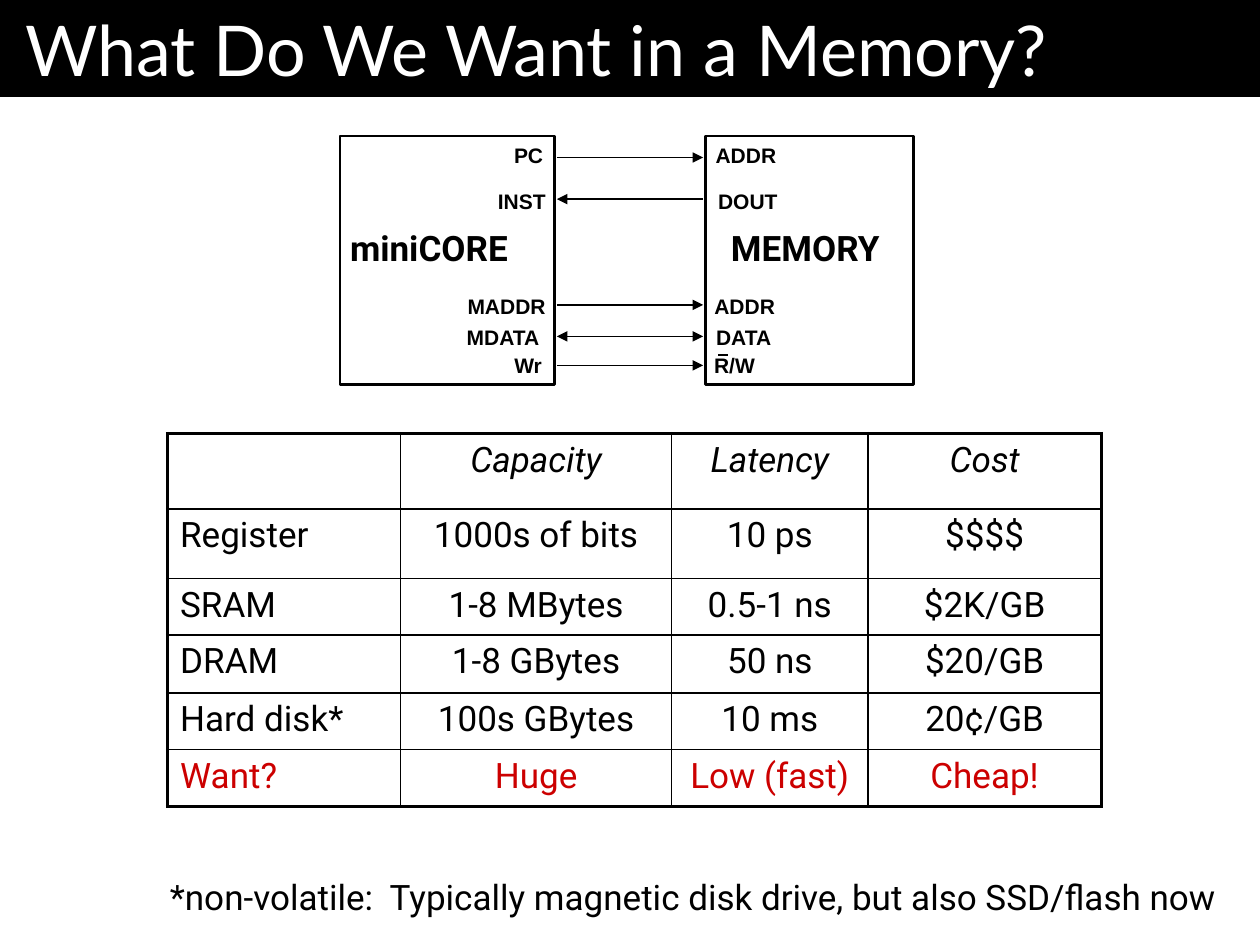
from dataclasses import dataclass

from lxml import etree
from pptx import Presentation
from pptx.dml.color import RGBColor
from pptx.enum.shapes import MSO_CONNECTOR, MSO_SHAPE
from pptx.enum.text import MSO_ANCHOR, MSO_AUTO_SIZE, PP_ALIGN
from pptx.oxml.ns import qn
from pptx.util import Inches, Pt

LEFT, CENTER, RIGHT = PP_ALIGN.LEFT, PP_ALIGN.CENTER, PP_ALIGN.RIGHT
STRAIGHT, RECTANGLE = MSO_CONNECTOR.STRAIGHT, MSO_SHAPE.RECTANGLE
TITLE_ONLY = 5


@dataclass(frozen=True)
class Theme:
    ink: str = "000000"
    paper: str = "FFFFFF"
    accent: str = "CC0000"
    title_font: str = "Lato"
    body_font: str = "Roboto"
    signal_font: str = "Arial"
    title_size: int = 40
    body_size: int = 20
    signal_size: int = 12


THEME = Theme()

# Arrow height, arrow direction, label top, then (label, left, width) on each side
SIGNALS = [
    (0.17, "out", 0, ("PC", 1.28, 0.43), ("ADDR", 2.86, 0.7)),
    (0.5, "in", 0.37, ("INST", 1.15, 0.58), ("DOUT", 2.9, 0.67)),
    (1.34, "out", 1.2, ("MADDR", 0.9, 0.83), ("ADDR", 2.85, 0.7)),
    (1.59, "both", 1.45, ("MDATA", 0.88, 0.8), ("DATA", 2.86, 0.66)),
    (1.82, "out", 1.67, ("Wr", 1.26, 0.44), ("R/W", 2.85, 0.54)),
]

MEMORY_TYPES = [
    ("", "Capacity", "Latency", "Cost"),
    ("Register", "1000s of bits", "10 ps", "$$$$"),
    ("SRAM", "1-8 MBytes", "0.5-1 ns", "$2K/GB"),
    ("DRAM", "1-8 GBytes", "50 ns", "$20/GB"),
    ("Hard disk*", "100s GBytes", "10 ms", "20¢/GB"),
    ("Want?", "Huge", "Low (fast)", "Cheap!"),
]
COLUMN_WIDTHS = (1.85, 2.15, 1.56, 1.85)
ROW_HEIGHTS = (0.6, 0.55, 0.45, 0.46, 0.45, 0.45)


def style_text(frame, font, size, color=THEME.ink, align=LEFT, bold=False, italic=False):
    for paragraph in frame.paragraphs:
        paragraph.alignment = align
        for run in paragraph.runs:
            run.font.name = font
            run.font.size = Pt(size)
            run.font.bold = bold
            run.font.italic = italic
            run.font.color.rgb = RGBColor.from_string(color)


def add_label(slide, text, left, top, width, height, **style):
    frame = slide.shapes.add_textbox(
        Inches(left), Inches(top), Inches(width), Inches(height)).text_frame
    frame.word_wrap = False
    frame.auto_size = MSO_AUTO_SIZE.SHAPE_TO_FIT_TEXT
    frame.text = text
    style_text(frame, **style)


def add_line(slide, start, end, weight, ends=()):
    """Draw a straight line; ends lists the arrowheads, headEnd or tailEnd."""
    connector = slide.shapes.add_connector(
        STRAIGHT, *(Inches(value) for value in (*start, *end)))
    connector.line.color.rgb = RGBColor.from_string(THEME.ink)
    connector.line.width = Pt(weight)
    properties = connector._element.spPr
    outline = properties.find(qn("a:ln"))
    for end_name in ends:
        etree.SubElement(outline, qn(f"a:{end_name}"), type="triangle")
    etree.SubElement(properties, qn("a:effectLst"))


def add_title(slide, left, top, width, height):
    title = slide.shapes.title
    title.left, title.top = Inches(left), Inches(top)
    title.width, title.height = Inches(width), Inches(height)
    title.fill.solid()
    title.fill.fore_color.rgb = RGBColor.from_string(THEME.ink)
    frame = title.text_frame
    frame.margin_left = frame.margin_right = Inches(0.2)
    frame.margin_top = frame.margin_bottom = Inches(0.05)
    frame.vertical_anchor = MSO_ANCHOR.TOP
    frame.auto_size = MSO_AUTO_SIZE.NONE
    frame.text = "What Do We Want in a Memory?"
    style_text(frame, THEME.title_font, THEME.title_size, THEME.paper)


def add_unit(slide, left, top, width, height):
    unit = slide.shapes.add_shape(
        RECTANGLE, Inches(left), Inches(top), Inches(width), Inches(height))
    unit.shadow.inherit = False
    unit.fill.background()
    unit.line.color.rgb = RGBColor.from_string(THEME.ink)
    unit.line.width = Pt(1.5)


def add_signal_diagram(slide, left, top, height):
    """Processor and memory blocks joined by their signals."""
    for unit_left, unit_width in ((0, 1.7), (2.9, 1.65)):
        add_unit(slide, left + unit_left, top, unit_width, height)
    for name, name_left in (("miniCORE", -0.03), ("MEMORY", 2.92)):
        add_label(slide, name, left + name_left, top + 0.67, 1.46, 0.44,
                  font=THEME.body_font, size=THEME.body_size, align=RIGHT, bold=True)

    processor_edge, memory_edge = left + 1.72, left + 2.88
    for arrow_y, direction, label_y, *labels in SIGNALS:
        start, end = (processor_edge, top + arrow_y), (memory_edge, top + arrow_y)
        if direction != "out":
            start, end = end, start
        heads = ("headEnd", "tailEnd") if direction == "both" else ("tailEnd",)
        add_line(slide, start, end, 0.75, heads)
        for text, label_left, label_width in labels:
            add_label(slide, text, left + label_left, top + label_y, label_width, 0.3,
                      font=THEME.signal_font, size=THEME.signal_size, align=RIGHT, bold=True)

    bar_y = top + 1.74
    add_line(slide, (left + 3, bar_y), (left + 3.08, bar_y), 1)


def set_borders(cell, weights):
    """Set border weights in points, in the order left, right, top, bottom."""
    properties = cell._tc.get_or_add_tcPr()
    for side, weight in zip("LRTB", weights):
        border = etree.SubElement(properties, qn(f"a:ln{side}"), w=str(Pt(weight)))
        fill = etree.SubElement(border, qn("a:solidFill"))
        etree.SubElement(fill, qn("a:srgbClr"), val=THEME.ink)


def add_memory_table(slide, left, top, width, height):
    last_row, last_column = len(ROW_HEIGHTS) - 1, len(COLUMN_WIDTHS) - 1
    table = slide.shapes.add_table(
        last_row + 1, last_column + 1,
        Inches(left), Inches(top), Inches(width), Inches(height)).table
    table.first_row = table.horz_banding = False
    for column, column_width in zip(table.columns, COLUMN_WIDTHS):
        column.width = Inches(column_width)
    for row, row_height in zip(table.rows, ROW_HEIGHTS):
        row.height = Inches(row_height)

    for r, values in enumerate(MEMORY_TYPES):
        for c, value in enumerate(values):
            cell = table.cell(r, c)
            cell.text = value
            style_text(cell.text_frame, THEME.body_font, THEME.body_size,
                       THEME.accent if r == last_row else THEME.ink,
                       CENTER if c else LEFT, italic=r == 0)
            outer = (c == 0, c == last_column, r == 0, r == last_row)
            set_borders(cell, [2.25 if edge else 1 for edge in outer])
            cell.fill.background()


def add_footnote(slide, left, top, width, height):
    add_label(slide, "*non-volatile:  Typically magnetic disk drive, but also SSD/flash now",
              left, top, width, height, font=THEME.body_font, size=THEME.body_size)


def main():
    presentation = Presentation()
    presentation.slide_width, presentation.slide_height = Inches(10), Inches(7.5)
    slide = presentation.slides.add_slide(presentation.slide_layouts[TITLE_ONLY])
    add_title(slide, 0, 0, 10, 0.77)
    add_signal_diagram(slide, 2.7, 1.08, 1.97)
    add_memory_table(slide, 1.33, 3.44, sum(COLUMN_WIDTHS), sum(ROW_HEIGHTS))
    add_footnote(slide, 1.25, 6.9, 8.6, 0.44)
    presentation.save("out.pptx")


if __name__ == "__main__":
    main()
